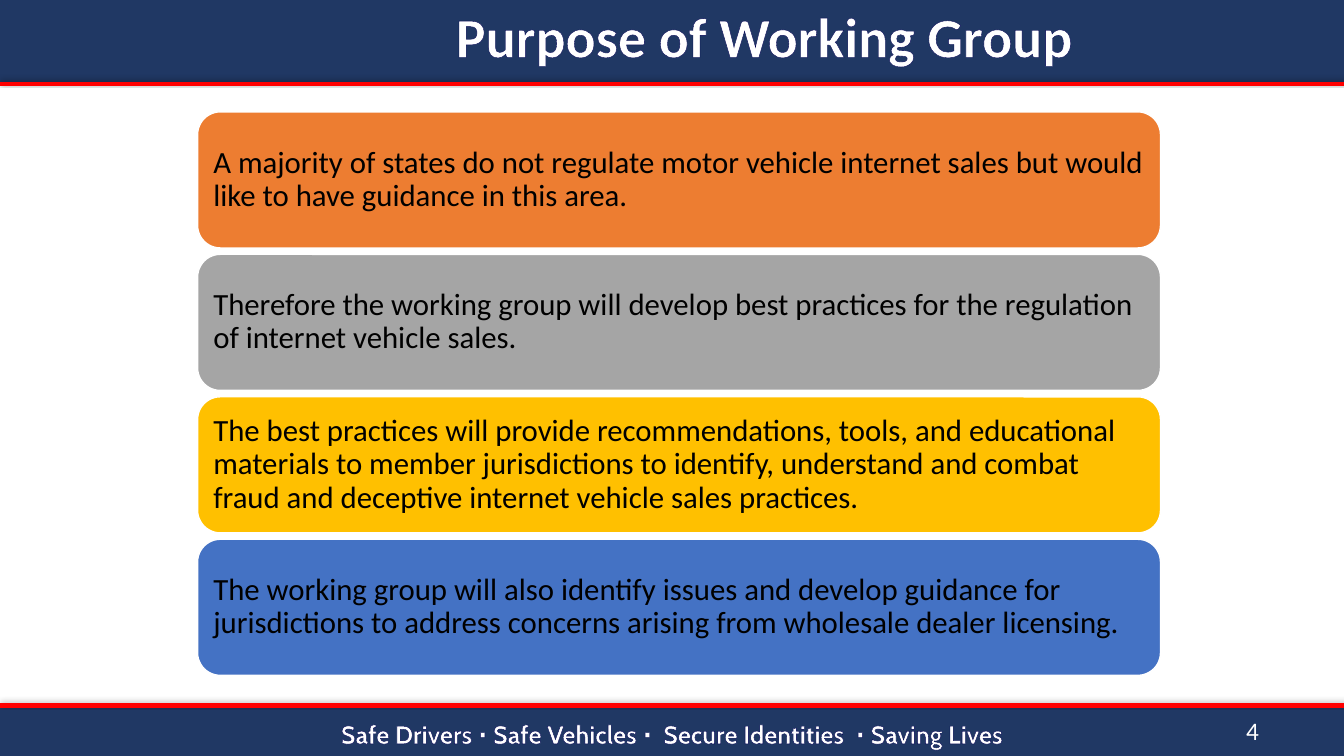
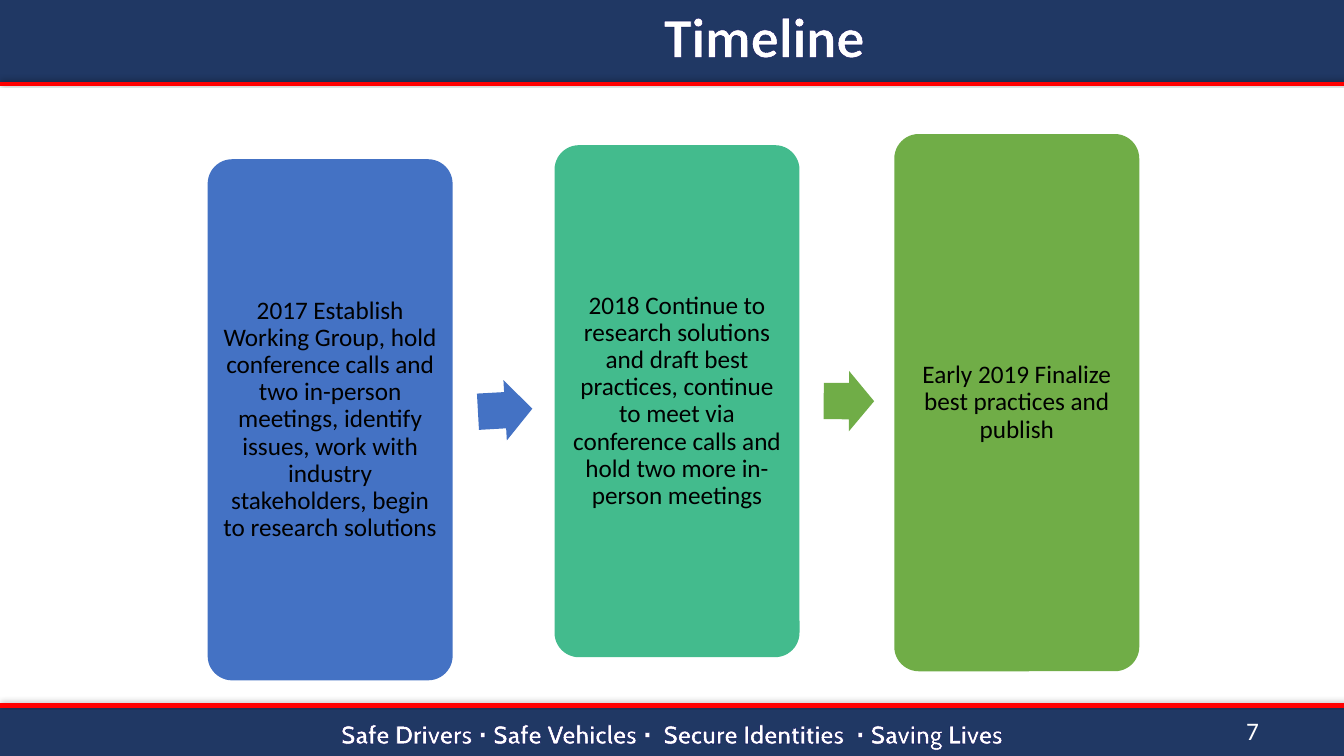
"""Builds the working group purpose and timeline slides."""
from lxml import etree
from pptx import Presentation
from pptx.dml.color import RGBColor
from pptx.enum import shapes, text
from pptx.oxml import ns
from pptx.util import Inches, Pt

NAVY = RGBColor(0x20, 0x38, 0x64)
RED = RGBColor(0xFF, 0x00, 0x00)
WHITE = RGBColor(0xFF, 0xFF, 0xFF)
BLACK = RGBColor(0x00, 0x00, 0x00)
OUTLINE = RGBColor(0x00, 0x00, 0x52)
ORANGE = RGBColor(0xED, 0x7D, 0x31)
GRAY = RGBColor(0xA5, 0xA5, 0xA5)
GOLD = RGBColor(0xFF, 0xC0, 0x00)
BLUE = RGBColor(0x44, 0x72, 0xC4)
TEAL = RGBColor(0x43, 0xBB, 0x8D)
GREEN = RGBColor(0x70, 0xAD, 0x47)

WIDTH, HEIGHT = 13.33, 7.5
HEADER_H, FOOTER_TOP = 0.83, 7
BODY_FONT, FOOTER_FONT = "Calibri", "Cabin"
MOTTO = "Safe Drivers ∙ Safe Vehicles ∙  Secure Identities  ∙ Saving Lives"

PURPOSES = [
    (ORANGE, "A majority of states do not regulate motor vehicle internet sales "
             "but would like to have guidance in this area."),
    (GRAY, "Therefore the working group will develop best practices for the "
           "regulation of internet vehicle sales."),
    (GOLD, "The best practices will provide recommendations, tools, and educational "
           "materials to member jurisdictions to identify, understand and combat "
           "fraud and deceptive internet vehicle sales practices."),
    (BLUE, "The working group will also identify issues and develop guidance for "
           "jurisdictions to address concerns arising from wholesale dealer licensing."),
]
STAGES = [
    (2.06, 1.58, 5.17, BLUE,
     "2017 Establish Working Group, hold conference calls and two in-person "
     "meetings, identify issues, work with industry stakeholders, begin to "
     "research solutions"),
    (5.5, 1.44, 5.08, TEAL,
     "2018 Continue to research solutions and draft best practices, continue to "
     "meet via conference calls and hold two more in-person meetings"),
    (8.87, 1.33, 5.33, GREEN, "Early 2019 Finalize best practices and publish"),
]
ARROWS = [(4.74, 3.77, 0.54, 356.8, BLUE), (8.17, 3.68, 0.5, 0.2, GREEN)]


def add_block(s, kind, box, fill, line=None):
    sp = s.shapes.add_shape(kind, *map(Inches, box))
    sp.shadow.inherit = False
    sp.fill.solid()
    sp.fill.fore_color.rgb = fill
    if line is None:
        sp.line.fill.background()
    else:
        sp.line.color.rgb = line
        sp.line.width = Pt(1)
    return sp


def write(sp, words, size, color, font=BODY_FONT, align=text.PP_ALIGN.LEFT,
          anchor=text.MSO_ANCHOR.MIDDLE, spacing=0.9, bold=False, margin=None):
    tf = sp.text_frame
    tf.word_wrap = True
    tf.vertical_anchor = anchor
    if margin is not None:
        tf.margin_left = tf.margin_right = Inches(margin)
        tf.margin_top = tf.margin_bottom = Inches(margin)
    p = tf.paragraphs[0]
    p.alignment = align
    p.line_spacing = spacing
    r = p.add_run()
    r.text = words
    p.font.name = font
    p.font.size = Pt(size)
    p.font.bold = bold
    p.font.color.rgb = color
    return r


def outline(r, width):
    ln = etree.Element(ns.qn("a:ln"), w=str(Pt(width)))
    fill = etree.SubElement(ln, ns.qn("a:solidFill"))
    etree.SubElement(fill, ns.qn("a:srgbClr"), val=str(OUTLINE))
    r.font._element.insert(0, ln)


def add_rule(s, y):
    line = s.shapes.add_connector(shapes.MSO_CONNECTOR.STRAIGHT, 0, Inches(y),
                                  Inches(WIDTH), Inches(y))
    line.line.color.rgb = RED
    line.line.width = Pt(3)
    effects = etree.SubElement(line._element.spPr, ns.qn("a:effectLst"))
    shadow = etree.SubElement(effects, ns.qn("a:outerShdw"), blurRad=str(Pt(3.1)),
                              dist=str(Pt(1.8)), dir=str(280 * 60000), rotWithShape="0")
    color = etree.SubElement(shadow, ns.qn("a:srgbClr"), val=str(BLACK))
    etree.SubElement(color, ns.qn("a:alpha"), val="35000")


def add_textbox(s, *box):
    return s.shapes.add_textbox(*map(Inches, box))


def add_slide(prs, title, number):
    s = prs.slides.add_slide(prs.slide_layouts[6])
    rect = shapes.MSO_SHAPE.RECTANGLE
    center = text.PP_ALIGN.CENTER
    add_block(s, rect, (0, 0, WIDTH, HEADER_H), NAVY)
    footer = add_block(s, rect, (0, FOOTER_TOP, WIDTH, HEIGHT - FOOTER_TOP), NAVY)
    outline(write(footer, MOTTO, 18, WHITE, FOOTER_FONT, center,
                  spacing=1.2, bold=True), 0.25)
    for y in (HEADER_H, FOOTER_TOP):
        add_rule(s, y)
    write(add_textbox(s, 12.26, 7.05, 0.71, 0.4), str(number), 18, WHITE,
          anchor=text.MSO_ANCHOR.TOP, spacing=1.0)
    outline(write(add_textbox(s, 1.83, 0, 11.5, 0.78), title, 40, WHITE,
                  align=center, bold=True), 0.75)
    return s


def add_purposes(s):
    top, last_top = 1.11, 5.35
    pitch = (last_top - top) / (len(PURPOSES) - 1)
    for i, (color, words) in enumerate(PURPOSES):
        sp = add_block(s, shapes.MSO_SHAPE.ROUNDED_RECTANGLE,
                       (1.96, top + i * pitch, 9.55, 1.35), color, WHITE)
        write(sp, words, 22, BLACK, margin=0.09)


def add_timeline(s):
    for left, top, height, color, words in STAGES:
        sp = add_block(s, shapes.MSO_SHAPE.ROUNDED_RECTANGLE,
                       (left, top, 2.43, height), color)
        sp.adjustments[0] = 0.1
        write(sp, words, 18, BLACK, align=text.PP_ALIGN.CENTER, margin=0.07)
    for left, top, width, angle, color in ARROWS:
        arrow = add_block(s, shapes.MSO_SHAPE.RIGHT_ARROW,
                          (left, top, width, 0.6), color)
        arrow.adjustments[0] = 0.6
        arrow.adjustments[1] = 0.5
        arrow.rotation = angle


def main():
    prs = Presentation()
    prs.slide_width = Inches(WIDTH)
    prs.slide_height = Inches(HEIGHT)
    add_purposes(add_slide(prs, "Purpose of Working Group", 4))
    add_timeline(add_slide(prs, "Timeline", 7))
    prs.save("out.pptx")


if __name__ == "__main__":
    main()
